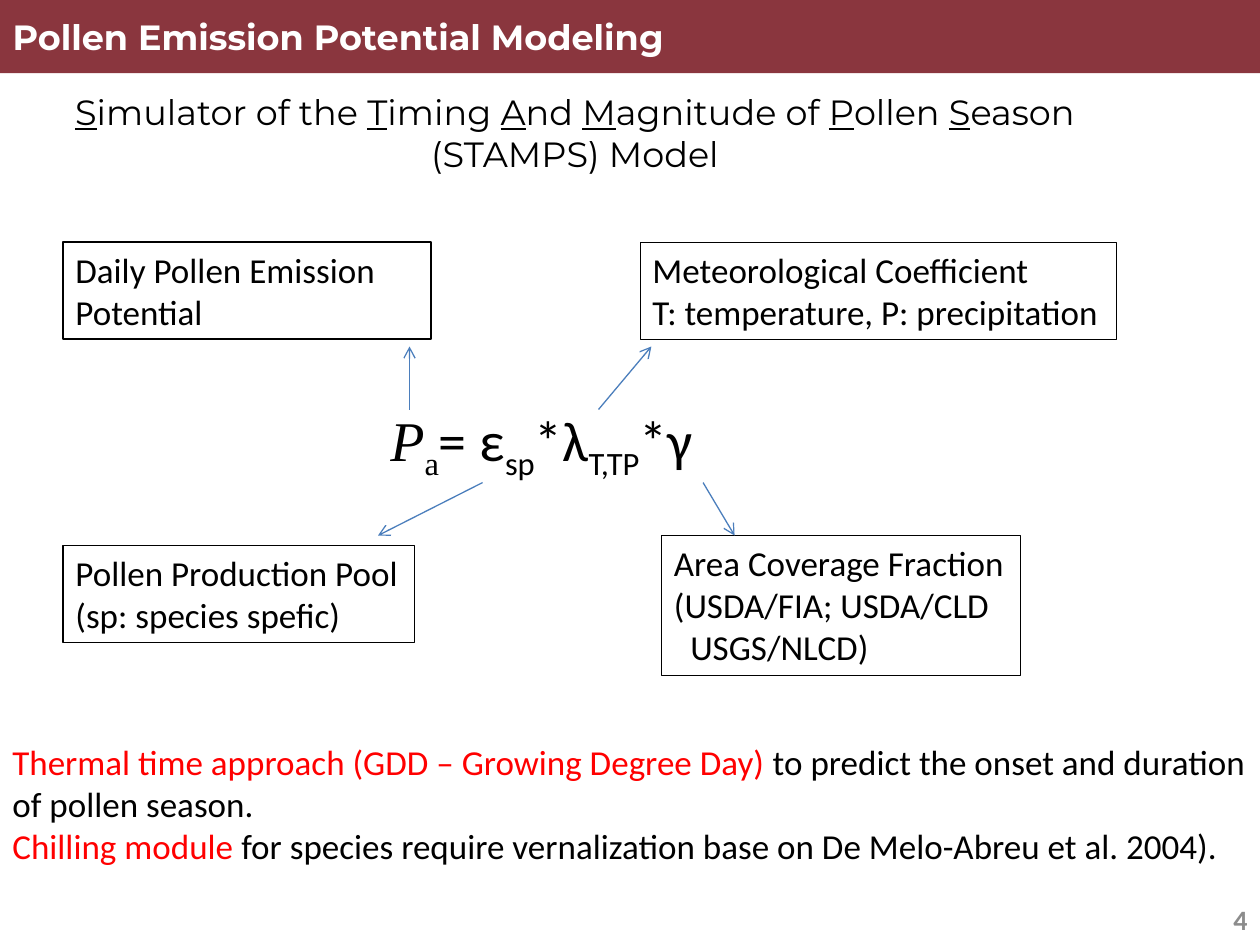
from lxml import etree
from pptx import Presentation
from pptx.dml.color import RGBColor
from pptx.enum.shapes import MSO_CONNECTOR, MSO_SHAPE
from pptx.enum.text import MSO_ANCHOR as ANCHOR, MSO_AUTO_SIZE as FIT, PP_ALIGN as ALIGN
from pptx.oxml.ns import qn
from pptx.util import Inches, Pt

MAROON = RGBColor(0x8A, 0x36, 0x3E)
WHITE = RGBColor(0xFF, 0xFF, 0xFF)
BLACK = RGBColor(0, 0, 0)
RED = RGBColor(0xFF, 0, 0)
GRAY = RGBColor(0x8C, 0x8C, 0x8C)
BLUE = RGBColor(0x4B, 0x7E, 0xBC)


def add_runs(p, runs, align=ALIGN.LEFT, **base):
    """Fill a paragraph with (text, format) runs on top of a base format."""
    p.alignment = align
    for text, extra in runs:
        r = p.add_run()
        r.text = text
        fmt = {"size": Pt(20), "name": "Calibri", "color": BLACK, **base, **extra}
        r.font.color.rgb = fmt.pop("color")
        if fmt.pop("subscript", False):
            r.font._element.set("baseline", "-25000")
        for key, value in fmt.items():
            setattr(r.font, key, value)


def set_text(s, paragraphs, wrap=True, fit=FIT.SHAPE_TO_FIT_TEXT,
             anchor=ANCHOR.TOP, **fmt):
    """Write a list of paragraphs, each a list of runs, into a shape."""
    tf = s.text_frame
    tf.word_wrap, tf.auto_size, tf.vertical_anchor = wrap, fit, anchor
    for i, runs in enumerate(paragraphs):
        p = tf.add_paragraph() if i else tf.paragraphs[0]
        add_runs(p, runs, **fmt)


prs = Presentation()
prs.slide_width, prs.slide_height = Inches(10), Inches(7.5)
slide = prs.slides.add_slide(prs.slide_layouts[5])
shapes = slide.shapes

# Title bar
title = shapes.title
title.left, title.top = Inches(0), Inches(0)
title.width, title.height = Inches(10), Inches(0.58)
title.fill.solid()
title.fill.fore_color.rgb = MAROON
set_text(title, [[("Pollen Emission Potential Modeling", {})]], fit=FIT.NONE,
         anchor=ANCHOR.MIDDLE, name="Montserrat", color=WHITE, bold=True)

# Model name, with the letters of the acronym underlined
words = [("S", "imulator of the "), ("T", "iming "), ("A", "nd "),
         ("M", "agnitude of "), ("P", "ollen "), ("S", "eason ")]
model_name = []
for initial, rest in words:
    model_name += [(initial, {"underline": True}), (rest, {})]
s = shapes.add_textbox(Inches(0.17), Inches(0.67), Inches(8.86), Inches(0.77))
set_text(s, [model_name, [("(STAMPS) Model ", {})]], wrap=False,
         align=ALIGN.CENTER, name="Montserrat")

# Equation
serif, sub = {"name": "Times New Roman"}, {"subscript": True}
s = shapes.add_textbox(Inches(3), Inches(3.17), Inches(2.83), Inches(0.64))
set_text(s, [[("P", {**serif, "italic": True}), ("a", {**serif, **sub}),
              ("= ε", {}), ("sp", sub), ("*λ", {}), ("T,TP", sub), ("*γ", {})]],
         size=Pt(32))

# Boxes explaining each term: left, top, width, height, line width, wrap, lines
boxes = [
    (0.5, 1.92, 2.92, 0.77, 1, True, ["Daily Pollen Emission Potential"]),
    (5.08, 1.92, 3.78, 0.77, 0.25, False,
     ["Meteorological Coefficient", "T: temperature, P: precipitation"]),
    (0.5, 4.33, 2.79, 0.77, 0.75, False,
     ["Pollen Production Pool", "(sp: species spefic)"]),
    (5.25, 4.25, 2.85, 1.11, 0.75, False,
     ["Area Coverage Fraction", "(USDA/FIA; USDA/CLD", "USGS/NLCD)"]),
]
for left, top, width, height, weight, wrap, lines in boxes:
    s = shapes.add_shape(MSO_SHAPE.RECTANGLE, Inches(left), Inches(top),
                         Inches(width), Inches(height))
    s.shadow.inherit = False
    s.fill.background()
    s.line.color.rgb = BLACK
    s.line.width = Pt(weight)
    set_text(s, [[(line, {})] for line in lines], wrap=wrap)

# Indent the continued source list in the last box
s.text_frame.paragraphs[-1]._p.get_or_add_pPr().set("marL", str(Inches(0.13)))

# Arrows from the equation terms to their boxes
arrows = [(3.25, 3.25, 3.25, 2.75), (4.75, 3.25, 5.17, 2.75),
          (3.83, 3.83, 3, 4.25), (5.58, 3.83, 5.83, 4.25)]
for ends in arrows:
    c = shapes.add_connector(MSO_CONNECTOR.STRAIGHT, *[Inches(v) for v in ends])
    c.line.color.rgb = BLUE
    c.line.width = Pt(0.75)
    etree.SubElement(c.line._get_or_add_ln(), qn("a:tailEnd"), type="arrow")
    etree.SubElement(c._element.spPr, qn("a:effectLst"))

# Method notes
red = {"color": RED}
s = shapes.add_textbox(Inches(0), Inches(5.83), Inches(10), Inches(1.11))
set_text(s, [
    [("Thermal time approach (GDD – Growing Degree Day) ", red),
     ("to predict the onset and duration of pollen season.", {})],
    [("Chilling module ", red),
     ("for species require vernalization base on De Melo-Abreu et al. 2004).", {})],
])

# Slide number
s = shapes.add_textbox(Inches(7.67), Inches(7.1), Inches(2.33), Inches(0.4))
set_text(s, [[("4", {})]], fit=FIT.NONE, anchor=ANCHOR.MIDDLE, align=ALIGN.RIGHT,
         size=Pt(16), color=GRAY, bold=True)

prs.save("out.pptx")
